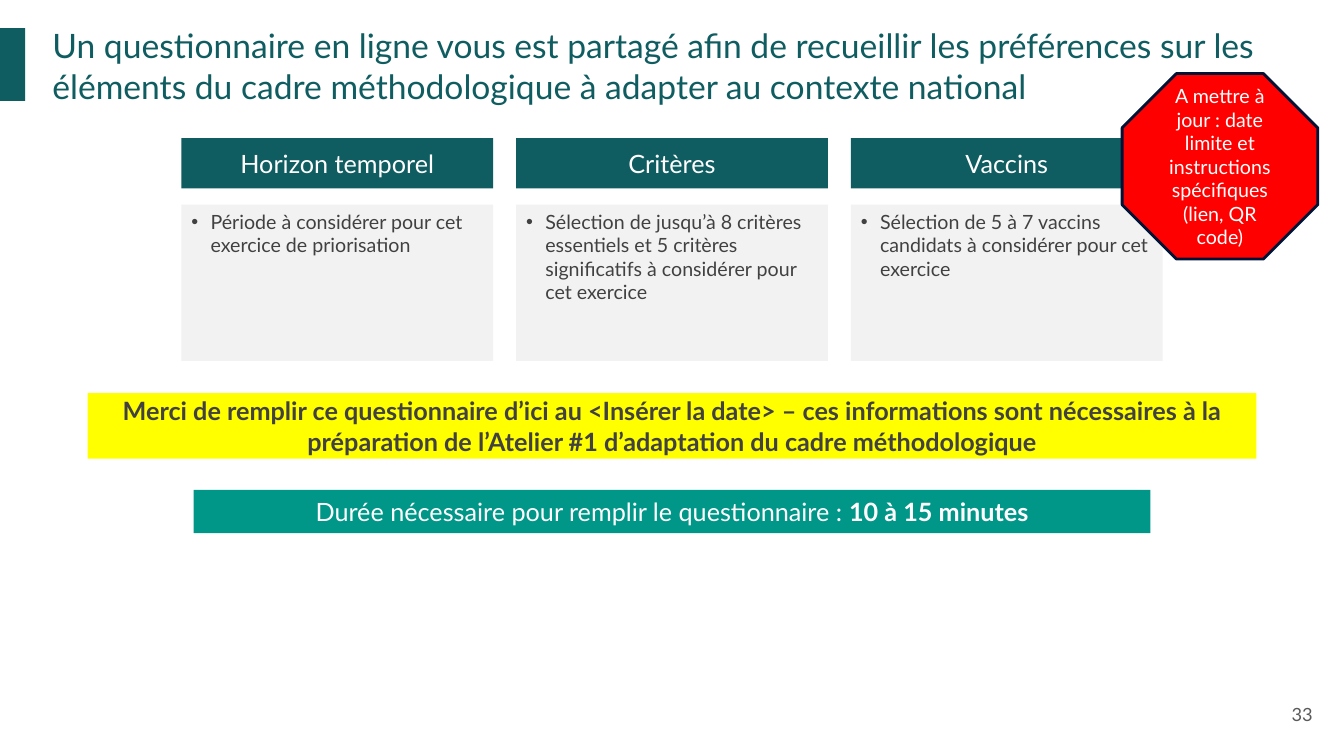
from dataclasses import dataclass

from lxml import etree
from pptx import Presentation
from pptx.dml.color import RGBColor
from pptx.enum.shapes import MSO_SHAPE
from pptx.enum.text import MSO_ANCHOR, MSO_AUTO_SIZE, PP_ALIGN
from pptx.oxml.ns import qn
from pptx.shapes.autoshape import Shape
from pptx.slide import Slide
from pptx.text.text import TextFrame
from pptx.util import Inches, Pt

RECTANGLE, OCTAGON = MSO_SHAPE.RECTANGLE, MSO_SHAPE.OCTAGON
LEFT, CENTER, RIGHT = PP_ALIGN.LEFT, PP_ALIGN.CENTER, PP_ALIGN.RIGHT
TOP, MIDDLE = MSO_ANCHOR.TOP, MSO_ANCHOR.MIDDLE
NO_AUTOFIT = MSO_AUTO_SIZE.NONE

FONT = "Lato"
DARK_TEAL, TEAL, YELLOW, RED = "0F5D61", "009688", "FFFF00", "FF0000"
NAVY, LIGHT_GREY, DARK_GREY, MID_GREY, WHITE = "001235", "F2F2F2", "414141", "595959", "FFFFFF"

COLUMN_LEFT, COLUMN_STEP, COLUMN_WIDTH = 1.8, 3.32, 3.09
BULLET_INDENT = 0.19


@dataclass(frozen=True)
class Box:
    left: float
    top: float
    width: float
    height: float


@dataclass(frozen=True)
class Span:
    text: str
    bold: bool = False


@dataclass(frozen=True)
class Style:
    size: float
    color: str
    align: PP_ALIGN = CENTER
    anchor: MSO_ANCHOR = MIDDLE


@dataclass(frozen=True)
class Topic:
    heading: str
    detail: str


TOPICS = (
    Topic("Horizon temporel", "Période à considérer pour cet exercice de priorisation"),
    Topic("Critères", "Sélection de jusqu’à 8 critères essentiels et 5 critères "
          "significatifs à considérer pour cet exercice"),
    Topic("Vaccins", "Sélection de 5 à 7 vaccins candidats à considérer pour cet exercice"),
)
BANNER = Style(18, WHITE)
DETAIL = Style(14, DARK_GREY, LEFT, TOP)


def rgb(color: str) -> RGBColor:
    return RGBColor.from_string(color)


def write(frame: TextFrame, style: Style, *spans: Span) -> None:
    frame.word_wrap = True
    frame.auto_size = NO_AUTOFIT
    frame.vertical_anchor = style.anchor
    paragraph = frame.paragraphs[0]
    paragraph.alignment = style.align
    for span in spans:
        run = paragraph.add_run()
        run.text = span.text
        run.font.name = FONT
        run.font.size = Pt(style.size)
        run.font.bold = span.bold
        run.font.color.rgb = rgb(style.color)


def set_margins(frame: TextFrame, inches: float) -> None:
    frame.margin_left = frame.margin_right = Inches(inches)
    frame.margin_top = frame.margin_bottom = Inches(inches)


def add_bullet(frame: TextFrame) -> None:
    properties = frame.paragraphs[0]._p.get_or_add_pPr()
    properties.set("marL", str(Inches(BULLET_INDENT)))
    properties.set("indent", str(-Inches(BULLET_INDENT)))
    etree.SubElement(properties, qn("a:buFont")).set("typeface", "Arial")
    etree.SubElement(properties, qn("a:buChar")).set("char", "•")


def lengths(box: Box) -> tuple[Inches, Inches, Inches, Inches]:
    return Inches(box.left), Inches(box.top), Inches(box.width), Inches(box.height)


def add_block(slide: Slide, box: Box, fill: str, kind: MSO_SHAPE = RECTANGLE) -> Shape:
    block = slide.shapes.add_shape(kind, *lengths(box))
    block.shadow.inherit = False
    block.fill.solid()
    block.fill.fore_color.rgb = rgb(fill)
    block.line.fill.background()
    return block


def add_title(slide: Slide) -> None:
    title = slide.shapes.title
    title.left, title.top, title.width, title.height = lengths(Box(0.52, 0.25, 12.55, 0.8))
    set_margins(title.text_frame, 0)
    write(title.text_frame, Style(24, DARK_TEAL, LEFT, TOP),
          Span("Un questionnaire en ligne vous est partagé afin de recueillir les préférences "
               "sur les éléments du cadre méthodologique à adapter au contexte national"))


def add_topic(slide: Slide, index: int, topic: Topic) -> None:
    left = COLUMN_LEFT + index * COLUMN_STEP
    heading = add_block(slide, Box(left, 1.37, COLUMN_WIDTH, 0.5), DARK_TEAL)
    write(heading.text_frame, BANNER, Span(topic.heading))
    detail = add_block(slide, Box(left, 2.03, COLUMN_WIDTH, 1.55), LIGHT_GREY)
    write(detail.text_frame, DETAIL, Span(topic.detail))
    add_bullet(detail.text_frame)


def add_page_number(slide: Slide) -> None:
    page_number = slide.shapes.add_textbox(*lengths(Box(12.35, 6.8, 0.8, 0.57)))
    set_margins(page_number.text_frame, 0.13)
    write(page_number.text_frame, Style(13, MID_GREY, RIGHT), Span("33"))


def main() -> None:
    deck = Presentation()
    deck.slide_width, deck.slide_height = Inches(13.33), Inches(7.5)
    slide = deck.slides.add_slide(deck.slide_layouts.get_by_name("Title Only"))

    add_block(slide, Box(-0.01, 0.28, 0.26, 0.72), DARK_TEAL)
    add_title(slide)
    add_page_number(slide)

    duration = add_block(slide, Box(1.92, 4.86, 9.49, 0.43), TEAL)
    write(duration.text_frame, BANNER,
          Span("Durée nécessaire pour remplir le questionnaire : "),
          Span("10 à 15 minutes", bold=True))

    deadline = add_block(slide, Box(0.87, 3.9, 11.59, 0.65), YELLOW)
    write(deadline.text_frame, Style(18, DARK_GREY),
          Span("Merci de remplir ce questionnaire d’ici au <Insérer la date> – ces informations "
               "sont nécessaires à la préparation de l’Atelier #1 d’adaptation du cadre "
               "méthodologique", bold=True))

    for index, topic in enumerate(TOPICS):
        add_topic(slide, index, topic)

    reminder = add_block(slide, Box(11.13, 0.73, 1.94, 1.84), RED, OCTAGON)
    reminder.line.color.rgb = rgb(NAVY)
    reminder.line.width = Pt(2)
    write(reminder.text_frame, Style(14, WHITE),
          Span("A mettre à jour : date limite et instructions spécifiques (lien, QR code)"))

    deck.save("out.pptx")


if __name__ == "__main__":
    main()
